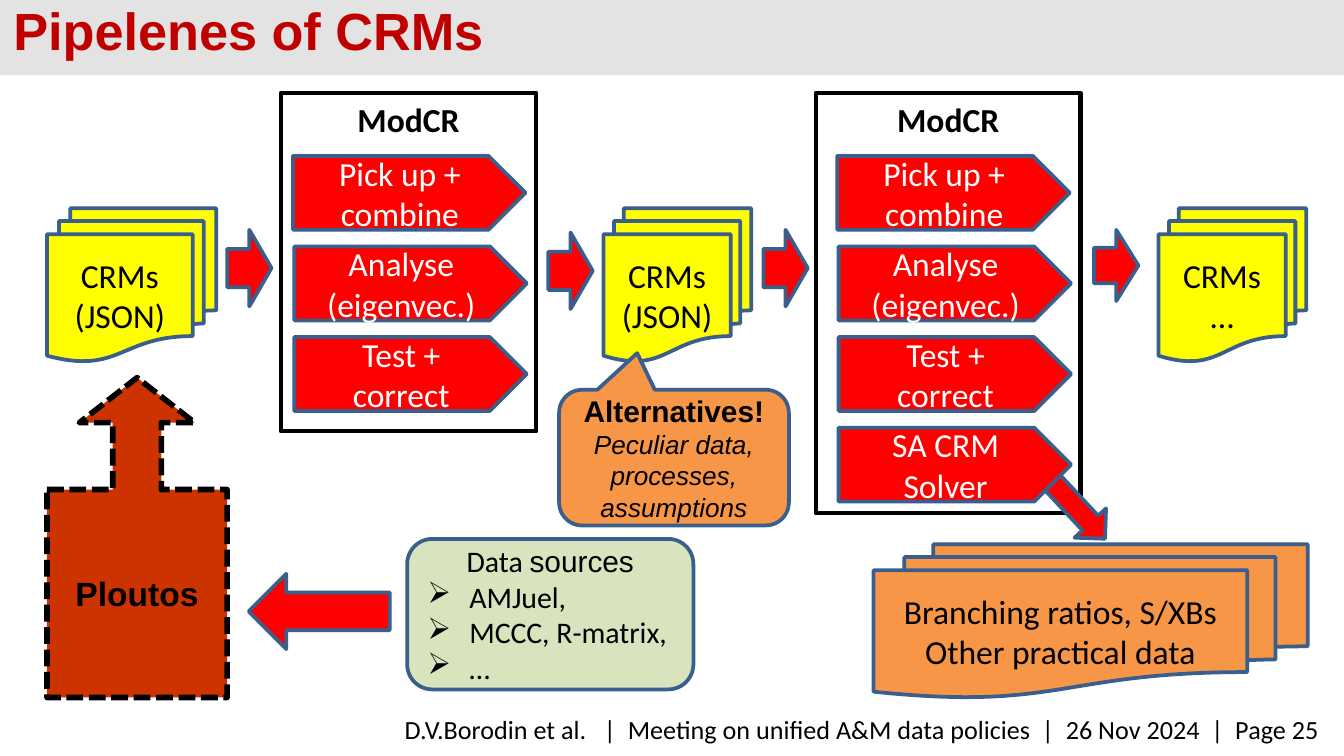
from pptx import Presentation
from pptx.dml.color import RGBColor
from pptx.enum.dml import MSO_LINE
from pptx.enum.shapes import MSO_SHAPE as SHP
from pptx.enum.text import MSO_ANCHOR as ANC, MSO_AUTO_SIZE as AUTO, PP_ALIGN as AL
from pptx.util import Inches, Pt
from lxml import etree

prs = Presentation()
prs.slide_width = Inches(10)
prs.slide_height = prs.slide_width * 9 // 16
s = prs.slides.add_slide(prs.slide_layouts[5])
col = row = prs.slide_width / 100

RED, YELLOW, ORANGE, BLUE = "FF0000", "FFFF00", "F79646", "3A5F8C"
BLACK, WHITE = "000000", "FFFFFF"


def paint(fmt, color):
    fmt.solid()
    fmt.fore_color.rgb = RGBColor.from_string(color)


def add(kind, x, y, w, h, fill=None, line=BLUE, lines=(), color=BLACK,
        size=18, face="Calibri", bold=False, width=2, anchor=ANC.MIDDLE):
    sp = s.shapes.add_shape(kind, *map(round, (x * col, y * row, w * col, h * row)))
    sp.shadow.inherit = False
    if fill:
        paint(sp.fill, fill)
    else:
        sp.fill.background()
    if line:
        paint(sp.line.fill, line)
        sp.line.width = Pt(width)
    else:
        sp.line.fill.background()
    tf = sp.text_frame
    tf.word_wrap = True
    tf.vertical_anchor = anchor
    for i, text in enumerate(lines):
        p = tf.add_paragraph() if i else tf.paragraphs[0]
        p.text = text
        p.alignment = AL.CENTER
        for r in p.runs:
            r.font.size, r.font.name, r.font.bold = Pt(size), face, bold
            paint(r.font.fill, color)
    return sp


band = add(SHP.RECTANGLE, 0, 0, 100, 5.6, "E3E3E3", None)
title = s.shapes.title
title.element.addprevious(band.element)
title.left, title.top = 0, round(-0.6 * row)
title.width, title.height = round(70.1 * col), round(5.7 * row)
tf = title.text_frame
tf.text = "Pipelenes of CRMs"
tf.auto_size = AUTO.NONE
tf.vertical_anchor = ANC.TOP
p = tf.paragraphs[0]
p.alignment = AL.LEFT
r = p.runs[0]
r.font.size, r.font.name, r.font.bold = Pt(28), "Arial", True
paint(r.font.fill, "C00000")

footer = s.shapes.add_textbox(*map(round, (19.3 * col, 52.6 * row, 79.9 * col, 3.4 * row)))
footer.text_frame.word_wrap = True
p = footer.text_frame.paragraphs[0]
p.text = "D.V.Borodin et al.   |  Meeting on unified A&M data policies  |  26 Nov 2024  |  Page 25"
p.alignment = AL.RIGHT
r = p.runs[0]
r.font.size, r.font.name = Pt(14), "Calibri"
paint(r.font.fill, BLACK)

for x, w, label in ((3.5, 12.6, "(JSON)"), (44.9, 11, "(JSON)"), (86.2, 11, "…")):
    add(SHP.FLOWCHART_MULTIDOCUMENT, x, 15.5, w, 11.4, YELLOW, lines=("CRMs", label))

for x, y, h in ((16.9, 17.1, 5.7), (40.8, 17.3, 5.7), (56.8, 17.1, 5.7), (81.4, 17.1, 5.3)):
    add(SHP.LEFT_ARROW, x, y, 3.3, h, RED).rotation = 180

for x, w, h in ((20.9, 19, 25.2), (60.7, 19.7, 31.3)):
    add(SHP.RECTANGLE, x, 6.9, w, h, line=BLACK, width=2.25, lines=("ModCR",),
        bold=True, anchor=ANC.TOP)

add(SHP.LEFT_ARROW, 76.5, 36, 6.8, 3.2, RED).rotation = 227

steps = (("Pick up +", "combine"), ("Analyse (eigenvec.)",),
         ("Test +", "correct"), ("SA CRM\vSolver",))
for x, count in ((21.9, 3), (62.4, 4)):
    for i, lines in enumerate(steps[:count]):
        add(SHP.PENTAGON, x - (0 if i else 0.1), 11.6 + 6.74 * i, 17.3, 5.5, RED,
            lines=lines, color=WHITE)

ploutos = add(SHP.UP_ARROW_CALLOUT, 3.5, 28.1, 13.4, 23.8, "CC3300", BLACK,
              ("Ploutos",), face="Arial", bold=True, width=3)
ploutos.line.dash_style = MSO_LINE.SQUARE_DOT
for i, value in enumerate((0.27, 0.32, 0.25, 0.65)):
    ploutos.adjustments[i] = value

add(SHP.LEFT_ARROW, 18.5, 42.7, 10.5, 5.6, RED)

sources = add(SHP.ROUNDED_RECTANGLE, 30.3, 40.1, 21.3, 11.2, "D7E4BD",
              lines=("Data ", "AMJuel,", "MCCC, R-matrix,", "…"), size=16)
heading, *items = sources.text_frame.paragraphs
r = heading.add_run()
r.text = "sources"
r.font.size, r.font.name = Pt(16), "Arial"
paint(r.font.fill, BLACK)
for p in items:
    p.alignment = AL.LEFT
    pPr = p._p.get_or_add_pPr()
    pPr.set("marL", str(Inches(0.31)))
    pPr.set("indent", str(-Inches(0.31)))
    bullet = etree.SubElement(pPr, pPr.tag.replace("}pPr", "}buChar"))
    bullet.set("char", "➢")

add(SHP.FLOWCHART_MULTIDOCUMENT, 65, 40.5, 32.3, 11.4, ORANGE,
    lines=("Branching ratios, S/XBs", "Other practical data"))

callout = add(SHP.ROUNDED_RECTANGULAR_CALLOUT, 41.6, 29, 17.1, 10.1, ORANGE,
              lines=("Alternatives!\vPeculiar data, processes, assumptions",),
              size=16, face="Arial", bold=True)
for i, value in enumerate((-0.16, -0.77, 0.17)):
    callout.adjustments[i] = value
r = callout.text_frame.paragraphs[0].runs[1]
r.font.size, r.font.bold, r.font.italic = Pt(14), False, True

prs.save("out.pptx")
